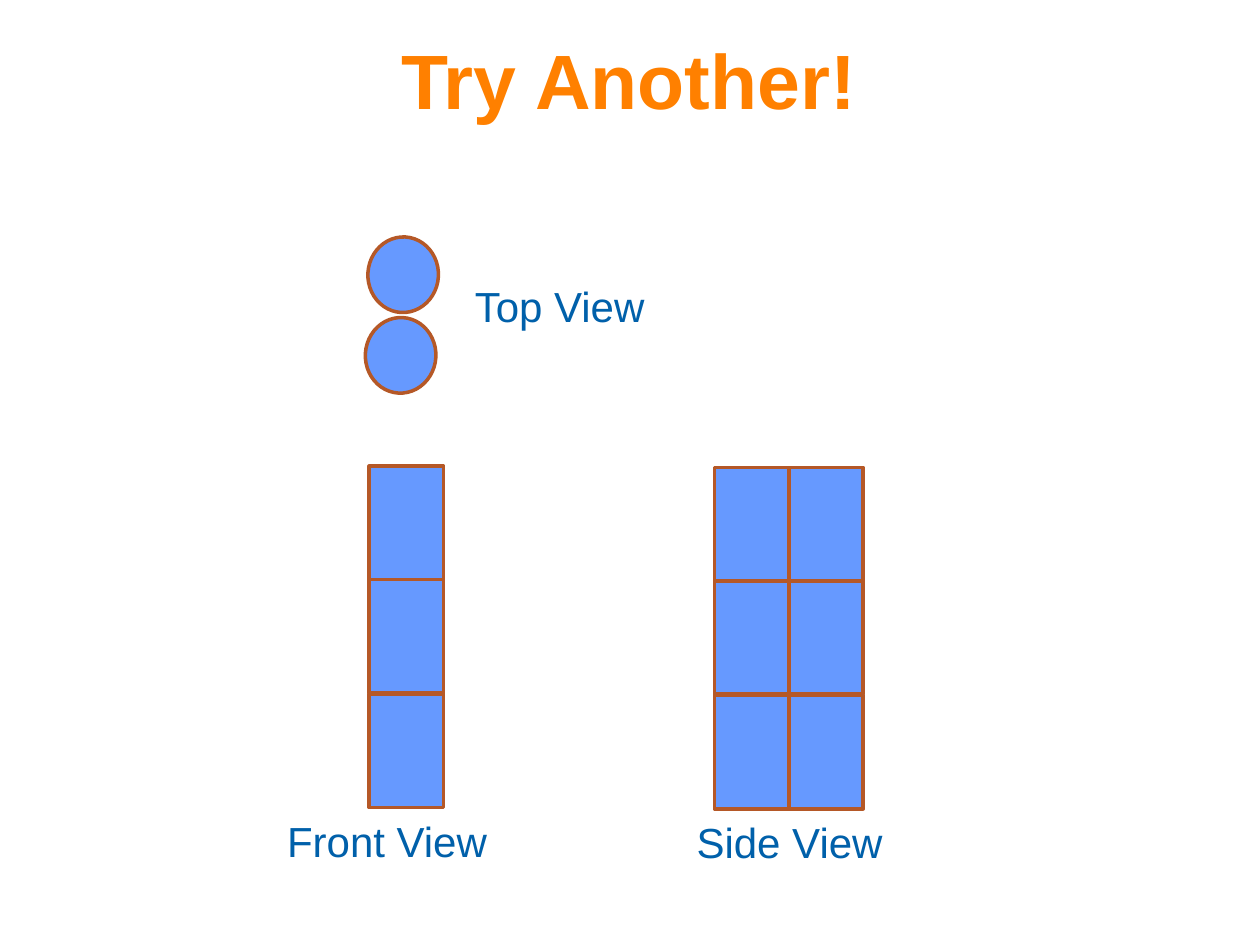
from itertools import product
from pptx import Presentation
from pptx.dml.color import RGBColor
from pptx.enum.shapes import MSO_SHAPE
from pptx.enum.text import MSO_ANCHOR, MSO_AUTO_SIZE, PP_ALIGN
from pptx.util import Inches, Pt

COLORS = {
    "background": "FFFFFF",
    "title": "FF8000",
    "label": "0060AA",
    "block": "6699FF",
    "edge": "B55827",
}
BLOCK_WIDTH = 0.59
BLOCK_HEIGHT = 0.9
ROW_OFFSETS = (0, 0.9, 1.81)


class ViewSlide:
    font_name = "Arial"
    edge_width = Pt(2)

    def __init__(self, presentation):
        self.slide = presentation.slides.add_slide(presentation.slide_layouts[5])
        background = self.slide.background.fill
        background.solid()
        background.fore_color.rgb = self.color("background")

    def color(self, role):
        return RGBColor.from_string(COLORS[role])

    def add_words(self, paragraph, words, size, role, bold=False):
        run = paragraph.add_run()
        run.text = words
        run.font.name = self.font_name
        run.font.size = Pt(size)
        run.font.bold = bold
        run.font.color.rgb = self.color(role)

    def title(self, words, left, top, width, height):
        heading = self.slide.shapes.title
        heading.left, heading.top = Inches(left), Inches(top)
        heading.width, heading.height = Inches(width), Inches(height)
        frame = heading.text_frame
        frame.vertical_anchor = MSO_ANCHOR.MIDDLE
        paragraph = frame.paragraphs[0]
        paragraph.alignment = PP_ALIGN.CENTER
        self.add_words(paragraph, words, 44, "title", bold=True)

    def label(self, words, left, top):
        caption = self.slide.shapes.add_textbox(
            Inches(left), Inches(top), Inches(2.16), Inches(0.5))
        frame = caption.text_frame
        frame.word_wrap = True
        frame.auto_size = MSO_AUTO_SIZE.SHAPE_TO_FIT_TEXT
        self.add_words(frame.paragraphs[0], words, 24, "label")

    def group(self):
        return self.slide.shapes.add_group_shape()

    def solid(self, view, preset, left, top, width, height, rotation=0):
        face = view.shapes.add_shape(
            preset, Inches(left), Inches(top), Inches(width), Inches(height))
        face.rotation = rotation
        face.shadow.inherit = False
        face.fill.solid()
        face.fill.fore_color.rgb = self.color("block")
        face.line.color.rgb = self.color("edge")
        face.line.width = self.edge_width

    def block_view(self, left, top, columns):
        view = self.group()
        for column, offset in product(range(columns), ROW_OFFSETS):
            self.solid(view, MSO_SHAPE.RECTANGLE, left + column * BLOCK_WIDTH,
                       top + offset, BLOCK_WIDTH, BLOCK_HEIGHT)

    def circle_view(self, corners):
        view = self.group()
        for left, top in corners:
            self.solid(view, MSO_SHAPE.OVAL, left, top, 0.6, 0.56, rotation=273.4)


def main():
    presentation = Presentation()
    presentation.slide_width = Inches(10)
    presentation.slide_height = Inches(7.5)

    views = ViewSlide(presentation)
    views.title("Try Another!", 0.74, 0, 8.5, 1.25)
    views.block_view(2.93, 3.7, columns=1)
    views.block_view(5.67, 3.71, columns=2)
    views.circle_view([(2.88, 2.54), (2.9, 1.9)])
    views.label("Top View", 3.67, 2.18)
    views.label("Side View", 5.43, 6.43)
    views.label("Front View", 2.18, 6.42)

    presentation.save("out.pptx")


if __name__ == "__main__":
    main()
